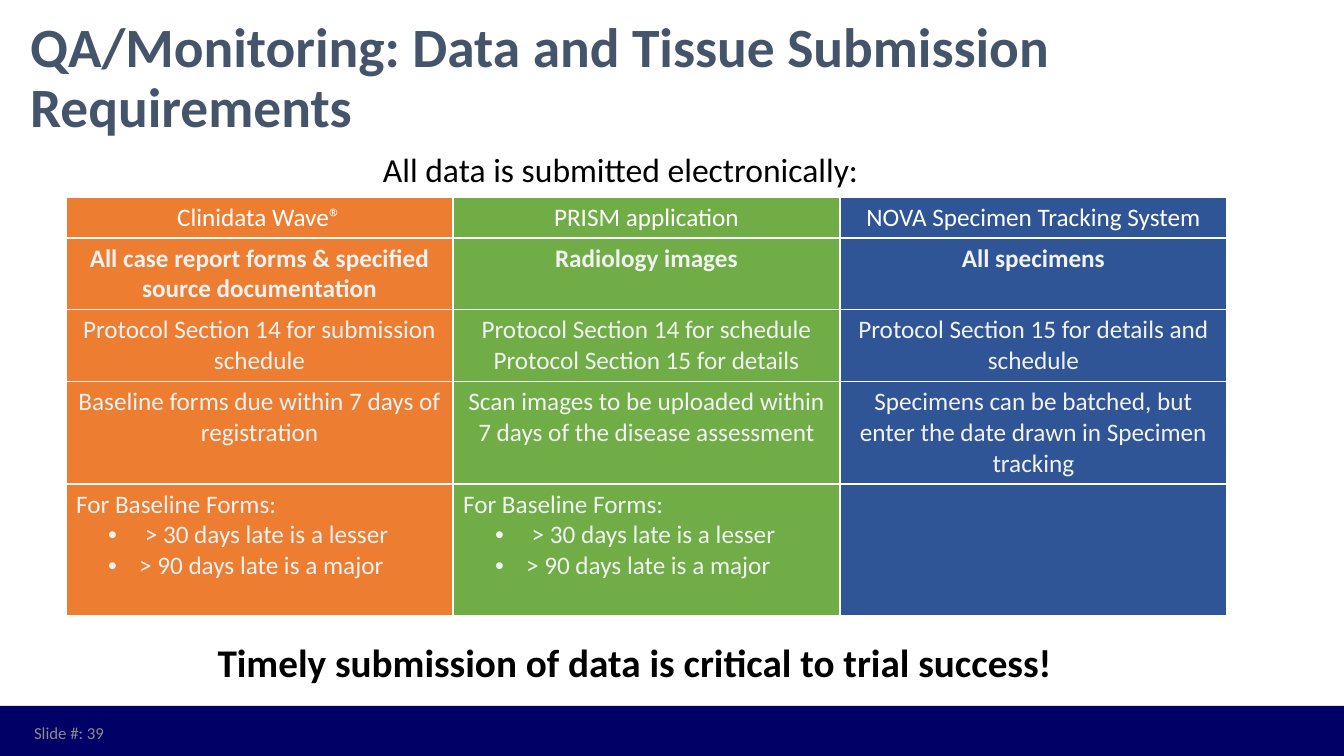
"""Build the data and tissue submission requirements slide."""
from lxml.etree import SubElement as Sub
from pptx import Presentation
from pptx.dml.color import RGBColor as RGB
from pptx.enum.shapes import MSO_SHAPE as Kind
from pptx.enum.text import MSO_ANCHOR as Anchor, MSO_AUTO_SIZE as Fit, PP_ALIGN as Align
from pptx.oxml.ns import qn
from pptx.util import Pt

HUES = {"navy": "000066", "slate": "44546A", "orange": "ED7D31", "green": "70AD47",
        "blue": "2F5597", "white": "FFFFFF", "pale": "F2F2F2", "black": "000000", "gray": "8C8C8C"}
HUES = {name: RGB.from_string(code) for name, code in HUES.items()}
SCALE = 914400 / 100.8


def px(*sizes):
    return [round(size * SCALE) for size in sizes]


def write(frame, lines, hue, size, bold=False, align=Align.LEFT):
    for num, line in enumerate(lines):
        para = frame.paragraphs[0] if num == 0 else frame.add_paragraph()
        bullet = line.startswith("•")
        para.text = line[1:] if bullet else line
        para.alignment = align
        if bullet:
            left, hang = px(63, -31)
            props = para._p.get_or_add_pPr()
            props.set("marL", str(left))
            props.set("indent", str(hang))
            Sub(props, qn("a:buFont")).set("typeface", "Arial")
            Sub(props, qn("a:buChar")).set("char", "•")
        for run in para.runs:
            run.font.color.rgb = HUES[hue]
            for key, val in {"name": "Calibri", "size": Pt(size), "bold": bold}.items():
                setattr(run.font, key, val)


deck = Presentation()
deck.slide_width, deck.slide_height = px(1344, 756)
slide = deck.slides.add_slide(deck.slide_layouts[5])
shapes = slide.shapes

band = shapes.add_shape(Kind.RECTANGLE, *px(0, 706, 1344, 50))
band.shadow.inherit = False
band.fill.solid()
band.fill.fore_color.rgb = HUES["navy"]
band.line.fill.background()

title = shapes.title
title.left, title.top, title.width, title.height = px(20, 11, 1324, 137)
look = {"word_wrap": True, "auto_size": Fit.NONE, "vertical_anchor": Anchor.MIDDLE}
for key, val in look.items():
    setattr(title.text_frame, key, val)
write(title.text_frame, ["QA/Monitoring: Data and Tissue Submission Requirements"],
      "slate", 39.6, True)
title.text_frame.paragraphs[0].line_spacing = 0.9

late = ["For Baseline Forms:", "• > 30 days late is a lesser", "•> 90 days late is a major"]
rows = [
    [["Clinidata Wave®"], ["PRISM application"], ["NOVA Specimen Tracking System"]],
    [["All case report forms & specified source documentation"],
     ["Radiology images"], ["All specimens"]],
    [["Protocol Section 14 for submission schedule"],
     ["Protocol Section 14 for schedule", "Protocol Section 15 for details"],
     ["Protocol Section 15 for details and schedule"]],
    [["Baseline forms due within 7 days of registration"],
     ["Scan images to be uploaded within 7 days of the disease assessment"],
     ["Specimens can be batched, but enter the date drawn in Specimen tracking"]],
    [late, late, []],
]
highs = [41, 71, 72, 102, 132]
table = shapes.add_table(5, 3, *px(66, 197, 1161, sum(highs))).table
table.first_row = table.horz_banding = False
for col in table.columns:
    col.width = px(387)[0]
for r, (high, row) in enumerate(zip(highs, rows)):
    table.rows[r].height = px(high)[0]
    for c, lines in enumerate(row):
        cell = table.cell(r, c)
        props = cell._tc.get_or_add_tcPr()
        for side in "LRTB":
            edge = Sub(props, qn(f"a:ln{side}"), w=str(Pt(1)))
            paint = Sub(edge, qn("a:solidFill"))
            Sub(paint, qn("a:srgbClr"), val=str(HUES["white"]))
        cell.fill.solid()
        cell.fill.fore_color.rgb = HUES[["orange", "green", "blue"][c]]
        write(cell.text_frame, lines, "pale" if r else "white", 18, r == 1,
              Align.LEFT if r == 4 else Align.CENTER)

notes = [
    ("Timely submission of data is critical to trial success!", (178, 633, 913, 57),
     "black", 28, True, Align.CENTER, True, Anchor.TOP),
    ("All data is submitted electronically:", (373, 144, 508, 50),
     "black", 24, False, Align.LEFT, False, Anchor.TOP),
    ("Slide #: 39", (15, 713, 99, 40), "gray", 12, False, Align.RIGHT, True, Anchor.MIDDLE),
]
for text, place, hue, size, bold, align, wrap, anchor in notes:
    frame = shapes.add_textbox(*px(*place)).text_frame
    for key, val in {"word_wrap": wrap, "vertical_anchor": anchor}.items():
        setattr(frame, key, val)
    write(frame, [text], hue, size, bold, align)

deck.save("out.pptx")
